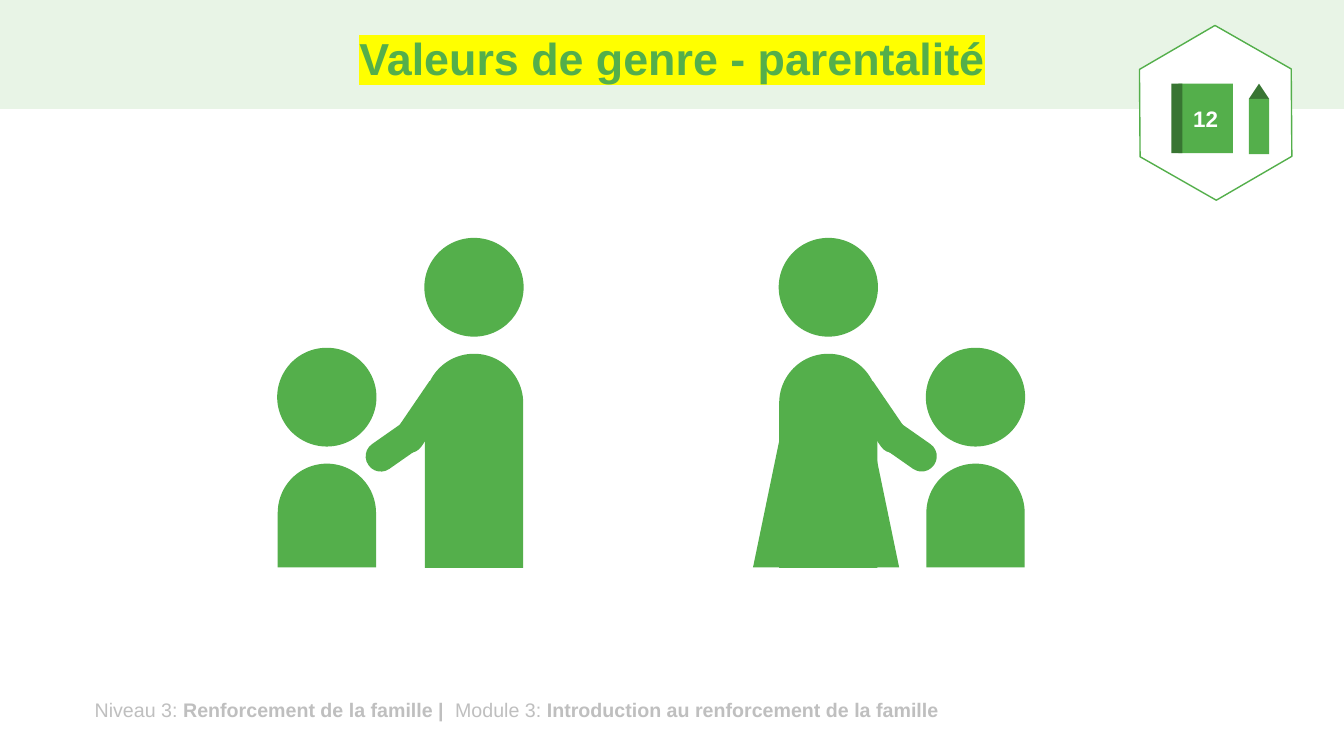
from dataclasses import dataclass

from lxml import etree
from pptx import Presentation
from pptx.dml.color import RGBColor
from pptx.enum.shapes import MSO_SHAPE
from pptx.enum.text import MSO_ANCHOR, MSO_AUTO_SIZE, PP_ALIGN
from pptx.oxml.ns import qn
from pptx.util import Inches, Pt

RECT, OVAL = MSO_SHAPE.RECTANGLE, MSO_SHAPE.OVAL
ARCH, SKIRT = MSO_SHAPE.ROUND_2_SAME_RECTANGLE, MSO_SHAPE.TRAPEZOID
HEXAGON, TIP = MSO_SHAPE.HEXAGON, MSO_SHAPE.ISOSCELES_TRIANGLE
CENTER, LEFT, MIDDLE = PP_ALIGN.CENTER, PP_ALIGN.LEFT, MSO_ANCHOR.MIDDLE
TOP, FIXED = MSO_ANCHOR.TOP, MSO_AUTO_SIZE.NONE


@dataclass(frozen=True)
class Theme:
    font: str = "Arial"
    green: str = "54AF4B"
    dark: str = "387532"
    pale: str = "E8F4E6"
    white: str = "FFFFFF"
    gray: str = "BFBFBF"
    mark: str = "FFFF00"
    title: int = 32
    badge: int = 16
    foot: int = 14


THEME = Theme()
CELL = Inches(0.1)      # grid of square cells, ten to the inch
COLS, ROWS = 133.33, 75
MIRROR = 129.2          # left edge plus right edge of mirrored parts


def cells(*counts):
    return [round(n * CELL) for n in counts]


def apply(item, values):
    for name, value in values.items():
        setattr(item, name, value)


def draw(parent, kind, box, color, turn=0, adj=(), line=None):
    """Add a flat preset shape to a slide or group."""
    shape = parent.shapes.add_shape(kind, *cells(*box))
    shape.shadow.inherit = False
    shape.fill.solid()
    shape.fill.fore_color.rgb = RGBColor.from_string(color)
    shape.rotation = turn
    for spot, value in enumerate(adj):
        shape.adjustments[spot] = value
    if line:
        shape.line.color.rgb = RGBColor.from_string(line)
        shape.line.width = Pt(1)
    else:
        shape.line.fill.background()
    return shape


def write(shape, parts, size, color, align=LEFT, anchor=TOP, wrap=True):
    """Fill one paragraph from (text, bold) parts."""
    frame = shape.text_frame
    apply(frame, {"word_wrap": wrap, "auto_size": FIXED,
                  "vertical_anchor": anchor})
    para = frame.paragraphs[0]
    para.alignment = align
    for text, bold in parts:
        run = para.add_run()
        run.text = text
        apply(run.font, {"name": THEME.font, "size": Pt(size), "bold": bold})
        run.font.color.rgb = RGBColor.from_string(color)
    return para


def shade(run, color):
    """Highlight a run; the tag belongs right after its fill."""
    mark = etree.Element(qn("a:highlight"))
    etree.SubElement(mark, qn("a:srgbClr"), val=color)
    run.font._element.find(qn("a:solidFill")).addnext(mark)


def add_title(slide, text):
    title = slide.shapes.title
    slide.shapes._spTree.append(title._element)  # bring above the band
    left, top, width, height = cells(9.2, 1.3, 115, 9.5)
    apply(title, {"left": left, "top": top, "width": width, "height": height})
    para = write(title, [(text, True)], THEME.title, THEME.green,
                 CENTER, MIDDLE)
    para.line_spacing = 0.9
    shade(para.runs[0], THEME.mark)


def add_foot(slide, parts):
    box = slide.shapes.add_textbox(*cells(8.4, 68.7, 106.2, 3.4))
    write(box, parts, THEME.foot, THEME.gray)


def add_badge(slide, number):
    group = slide.shapes.add_group_shape()
    draw(group, HEXAGON, (111.9, 3.7, 17.4, 15), THEME.white, 29.7,
         (0.29,), THEME.green)
    # Book with its spine
    book = draw(group, RECT, (116.9, 8.3, 5.4, 6.9), THEME.green)
    write(book, [(number, True)], THEME.badge, THEME.white,
          CENTER, MIDDLE, False)
    draw(group, RECT, (116.2, 8.3, 1.1, 6.9), THEME.dark)
    # Pencil
    draw(group, TIP, (123.9, 8.3, 2, 1.5), THEME.dark)
    draw(group, RECT, (123.9, 9.8, 2, 5.5), THEME.green)


def add_pair(slide, flip=False):
    """Draw a parent holding a child's hand, mirrored on request."""
    group = slide.shapes.add_group_shape()
    bow, cuff = (0.5, 0), (0.49, 0)
    parts = [
        (ARCH, (27.55, 46, 9.75, 10.3), 0, bow),      # child
        (OVAL, (27.5, 34.5, 9.85, 9.8), 0, ()),
        (ARCH, (42.15, 35.1, 9.75, 21.25), 0, bow),   # parent
        (OVAL, (42.1, 23.6, 9.85, 9.8), 0, ()),
        (ARCH, (40.3, 38, 3, 7.3), 214.3, cuff),      # arm
        (ARCH, (37.1, 42.2, 3, 5), 235, cuff),
    ]
    for kind, (left, top, width, height), turn, adj in parts:
        if flip:
            left, turn = MIRROR - left - width, -turn % 360
        draw(group, kind, (left, top, width, height), THEME.green, turn, adj)
    return group


def main():
    deck = Presentation()
    deck.slide_width, deck.slide_height = cells(COLS, ROWS)
    slide = deck.slides.add_slide(deck.slide_layouts[5])

    # Header and footer
    draw(slide, RECT, (0, 0, COLS, 10.8), THEME.pale)
    add_foot(slide, [("Niveau 3: ", False),
                     ("Renforcement de la famille | ", True),
                     (" Module 3: ", False),
                     ("Introduction au renforcement de la famille", True)])
    add_title(slide, "Valeurs de genre - parentalité")
    add_badge(slide, "12")

    # Father and mother, each with a child
    add_pair(slide)
    mother = add_pair(slide, flip=True)
    draw(mother, SKIRT, (74.7, 41.6, 14.5, 14.7), THEME.green, adj=(0.21,))

    deck.save("out.pptx")


if __name__ == "__main__":
    main()
